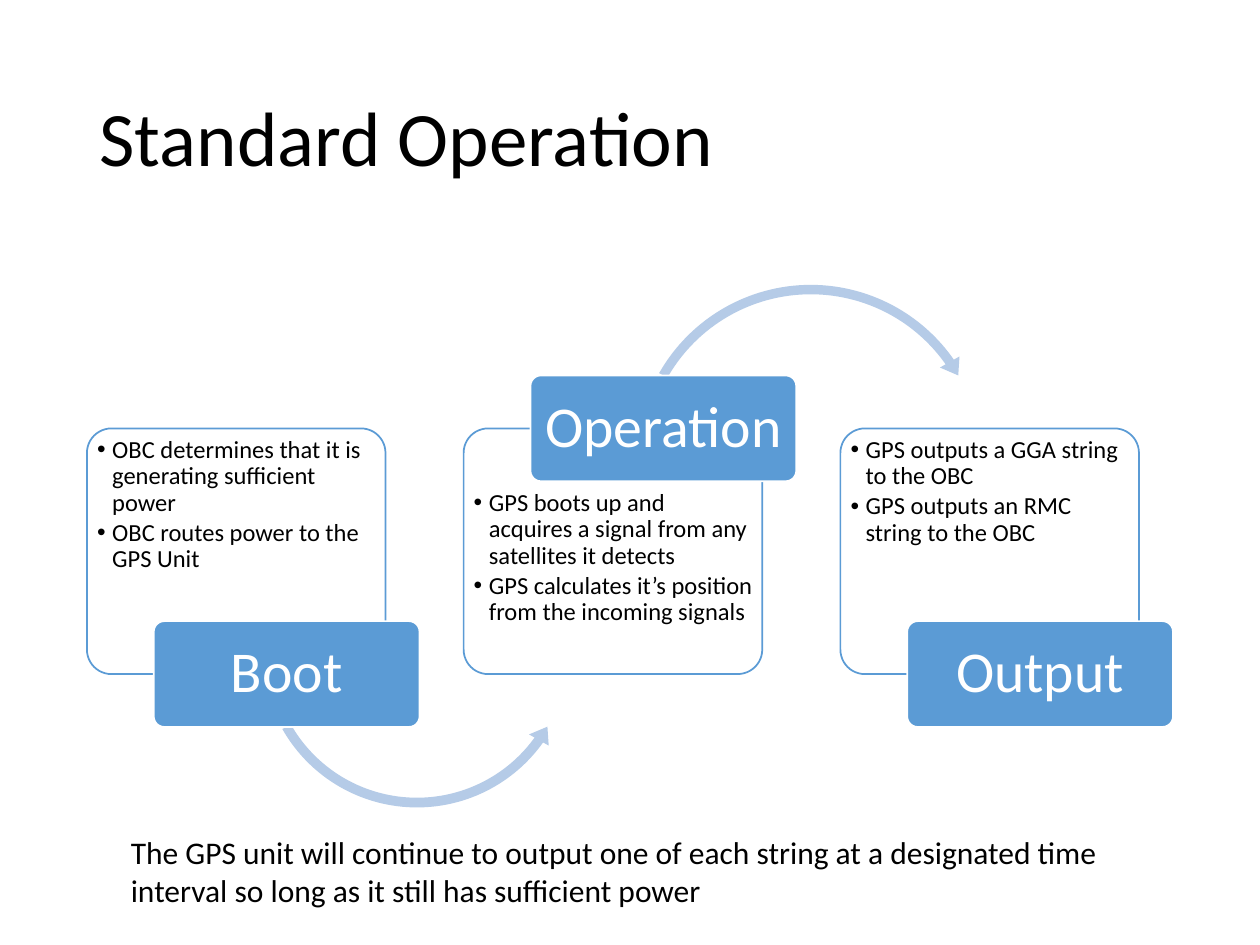
from dataclasses import dataclass

from lxml.etree import SubElement
from pptx import Presentation
from pptx.dml.color import RGBColor
from pptx.enum.shapes import MSO_SHAPE as Preset
from pptx.enum.text import MSO_ANCHOR as Anchor, MSO_AUTO_SIZE as AutoSize, PP_ALIGN as Align
from pptx.oxml.ns import qn
from pptx.util import Inches, Pt


@dataclass(frozen=True)
class Theme:
    font: str = "Calibri"
    ink: str = "000000"
    paper: str = "FFFFFF"
    accent: str = "5B9BD5"
    arrow: str = "B5CBE7"
    title_size: int = 44
    label_size: int = 33
    note_size: int = 18
    list_size: int = 14


THEME = Theme()
FIRST_LEFT, PITCH = 0.69, 2.99
CARD_TOP, CARD_SIZE = 3.4, (2.37, 1.95)
LABEL_OFFSET, LABEL_SIZE = 0.53, (2.11, 0.84)

STAGES = [
    ("Boot", False, ["OBC determines that it is generating sufficient power",
                     "OBC routes power to the GPS Unit"]),
    ("Operation", True, ["GPS boots up and acquires a signal from any satellites it detects",
                         "GPS calculates it’s position from the incoming signals"]),
    ("Output", False, ["GPS outputs a GGA string to the OBC",
                       "GPS outputs an RMC string to the OBC"]),
]
ARROWS = [
    (Preset.LEFT_CIRCULAR_ARROW, 2.03, 3.9, 2.56, (0.03, 3.628, 21.383, 90.245, 0.035)),
    (Preset.CIRCULAR_ARROW, 5, 2.21, 2.87, (0.026, 3.221, 195.024, 125.755, 0.031)),
]


def place(shape, left, top, width, height):
    shape.left, shape.top = Inches(left), Inches(top)
    shape.width, shape.height = Inches(width), Inches(height)


def set_margins(frame, side, end):
    frame.margin_left = frame.margin_right = Inches(side)
    frame.margin_top = frame.margin_bottom = Inches(end)


def style_text(frame, size, color, align=Align.LEFT, line_spacing=0.9, after=0):
    frame.word_wrap = True
    frame.auto_size = AutoSize.NONE
    for paragraph in frame.paragraphs:
        paragraph.alignment = align
        paragraph.line_spacing = line_spacing
        paragraph.space_before = Pt(0)
        paragraph.space_after = Pt(after)
        for run in paragraph.runs:
            run.font.name = THEME.font
            run.font.size = Pt(size)
            run.font.bold = False
            run.font.color.rgb = RGBColor.from_string(color)


def add_preset(slide, preset, box, adjustments, fill, line=None):
    shape = slide.shapes.add_shape(preset, *map(Inches, box))
    shape.shadow.inherit = False
    for index, value in enumerate(adjustments):
        shape.adjustments[index] = value
    shape.fill.solid()
    shape.fill.fore_color.rgb = RGBColor.from_string(fill)
    if line:
        shape.line.color.rgb = RGBColor.from_string(line)
        shape.line.width = Pt(1)
    else:
        shape.line.fill.background()
    return shape


def add_card(slide, left):
    card = add_preset(slide, Preset.ROUNDED_RECTANGLE, (left, CARD_TOP, *CARD_SIZE),
                      [0.1], THEME.paper, THEME.accent)
    fill_color = card.fill._xPr.find(qn("a:solidFill"))[0]
    SubElement(fill_color, qn("a:alpha"), val="90000")


def fill_list(slide, placeholder, items, left, top):
    slide.shapes._spTree.append(placeholder._element)
    place(placeholder, left, top, 2.28, 1.45)
    frame = placeholder.text_frame
    frame.text = "\n".join(items)
    frame.vertical_anchor = Anchor.TOP
    set_margins(frame, 0.03, 0.03)
    for paragraph in frame.paragraphs:
        properties = paragraph._p.get_or_add_pPr()
        properties.set("marL", str(Inches(0.12)))
        properties.set("indent", str(Inches(-0.12)))
        SubElement(properties, qn("a:buChar"), char="•")
    style_text(frame, THEME.list_size, THEME.ink, after=2)


def add_label(slide, name, left, top):
    label = add_preset(slide, Preset.ROUNDED_RECTANGLE, (left, top, *LABEL_SIZE),
                       [0.1], THEME.accent, THEME.paper)
    frame = label.text_frame
    frame.text = name
    frame.vertical_anchor = Anchor.MIDDLE
    set_margins(frame, 0.08, 0.05)
    style_text(frame, THEME.label_size, THEME.paper, Align.CENTER)


def add_arrow(slide, preset, left, top, size, adjustments):
    add_preset(slide, preset, (left, top, size, size), adjustments, THEME.arrow)


def add_title(slide, wording):
    title = slide.shapes.title
    place(title, 0.69, 0.4, 8.62, 1.45)
    title.text_frame.text = wording
    title.text_frame.vertical_anchor = Anchor.MIDDLE
    style_text(title.text_frame, THEME.title_size, THEME.ink)


def add_note(slide, wording):
    note = slide.shapes.add_textbox(*map(Inches, (0.94, 6.56, 8.63, 0.71)))
    note.text_frame.text = wording
    style_text(note.text_frame, THEME.note_size, THEME.ink, line_spacing=1)


def main():
    deck = Presentation()
    deck.slide_width, deck.slide_height = Inches(10), Inches(7.5)
    slide = deck.slides.add_slide(deck.slide_layouts.get_by_name("Comparison"))
    add_title(slide, "Standard Operation")
    *list_bodies, spare = list(slide.placeholders)[1:]
    spare._element.getparent().remove(spare._element)

    for index, (name, raised, items) in enumerate(STAGES):
        left = FIRST_LEFT + index * PITCH
        add_card(slide, left)
        fill_list(slide, list_bodies[index], items, left + 0.05, 3.86 if raised else 3.44)
        if index < len(ARROWS):
            add_arrow(slide, *ARROWS[index])
        add_label(slide, name, left + LABEL_OFFSET, 2.98 if raised else 4.93)

    add_note(slide, "The GPS unit will continue to output one of each string at a designated "
                    "time interval so long as it still has sufficient power")
    deck.save("out.pptx")


if __name__ == "__main__":
    main()
